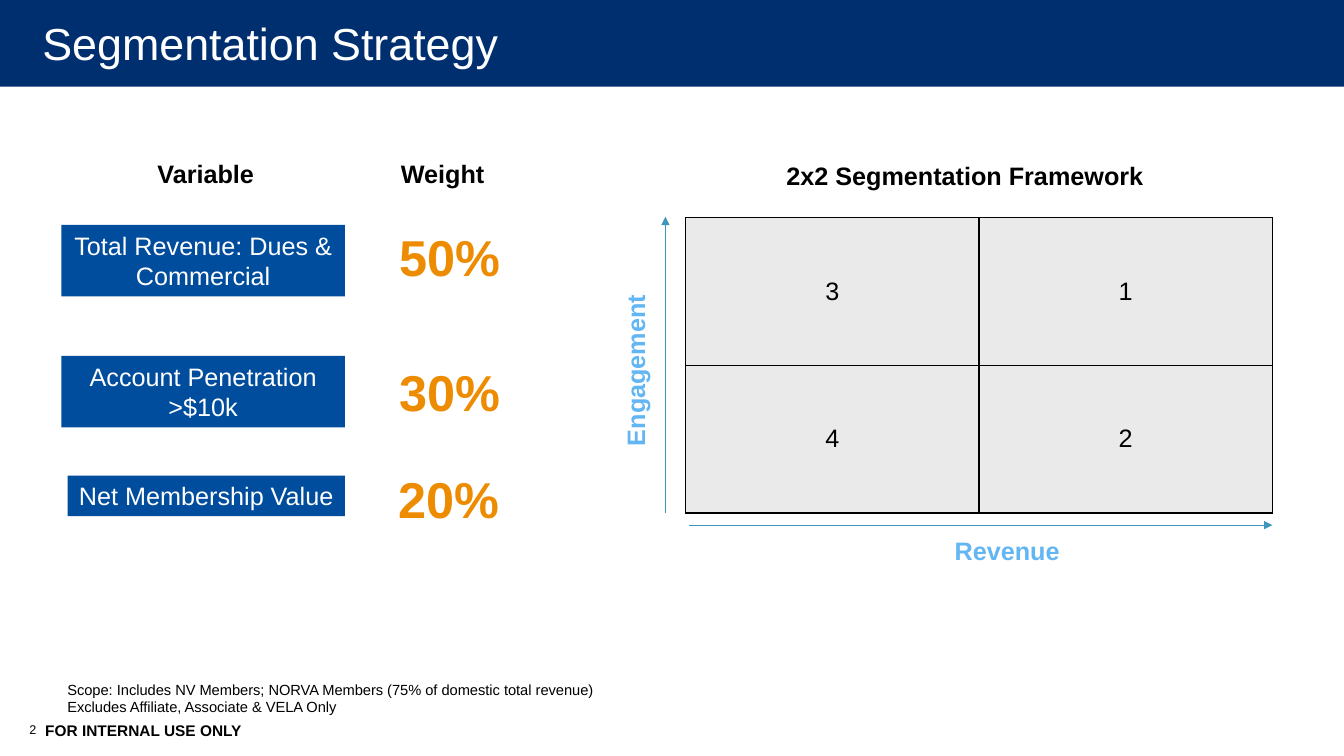
from lxml import etree
from pptx import Presentation
from pptx.dml.color import RGBColor
from pptx.enum.shapes import MSO_CONNECTOR, MSO_SHAPE
from pptx.enum.text import MSO_ANCHOR, PP_ALIGN
from pptx.oxml import parse_xml
from pptx.oxml.ns import nsdecls, qn
from pptx.util import Inches, Pt

LEFT, CENTER, RIGHT = PP_ALIGN.LEFT, PP_ALIGN.CENTER, PP_ALIGN.RIGHT
TOP, MIDDLE = MSO_ANCHOR.TOP, MSO_ANCHOR.MIDDLE
RECTANGLE = MSO_SHAPE.RECTANGLE
STRAIGHT = MSO_CONNECTOR.STRAIGHT

COLORS = {
    "banner": "002F70",
    "variable": "004C9D",
    "weight": "ED8C00",
    "axis": "62B6F3",
    "arrow": "3E96BD",
    "cell": "EBEAEA",
    "black": "000000",
    "white": "FFFFFF",
}


class SlideBuilder:
    """Holds the style and the current slide, and adds each kind of element."""

    font_name = "Arial"
    body_size = 18

    def __init__(self, slide):
        self.slide = slide

    def color(self, name):
        return RGBColor.from_string(COLORS[name])

    def fill_text(self, frame, text, size, color, bold=False, align=LEFT):
        frame.text = text
        for paragraph in frame.paragraphs:
            paragraph.alignment = align
            font = paragraph.font
            font.name, font.size, font.bold = self.font_name, Pt(size), bold
            font.color.rgb = self.color(color)

    def text(self, left, top, width, height, text, size=body_size, color="black",
             bold=False, align=LEFT, anchor=TOP, rotation=0):
        box = self.slide.shapes.add_textbox(
            Inches(left), Inches(top), Inches(width), Inches(height))
        box.rotation = rotation
        box.text_frame.word_wrap = True
        box.text_frame.vertical_anchor = anchor
        self.fill_text(box.text_frame, text, size, color, bold, align)
        return box

    def block(self, left, top, width, height, fill, text=""):
        shape = self.slide.shapes.add_shape(
            RECTANGLE, Inches(left), Inches(top), Inches(width), Inches(height))
        shape.shadow.inherit = False
        shape.fill.solid()
        shape.fill.fore_color.rgb = self.color(fill)
        shape.line.fill.background()
        if text:
            shape.text_frame.word_wrap = True
            self.fill_text(shape.text_frame, text, self.body_size, "white", align=CENTER)

    def arrow(self, start, end):
        connector = self.slide.shapes.add_connector(
            STRAIGHT, *(Inches(value) for value in start + end))
        connector.line.color.rgb = self.color("arrow")
        connector.line.width = Pt(0.75)
        line = connector.line._get_or_add_ln()
        etree.SubElement(line, qn("a:tailEnd"), type="triangle")
        etree.SubElement(connector._element.spPr, qn("a:effectLst"))

    def border(self, cell):
        properties = cell._tc.get_or_add_tcPr()
        for side in "LRTB":
            properties.append(parse_xml(
                f'<a:ln{side} {nsdecls("a")} w="{Pt(1)}"><a:solidFill>'
                f'<a:srgbClr val="{COLORS["black"]}"/></a:solidFill></a:ln{side}>'))

    def grid(self, left, top, width, height, rows):
        table = self.slide.shapes.add_table(
            len(rows), len(rows[0]), Inches(left), Inches(top),
            Inches(width), Inches(height)).table
        for row_index, row in enumerate(rows):
            for column_index, text in enumerate(row):
                cell = table.cell(row_index, column_index)
                self.border(cell)
                cell.fill.solid()
                cell.fill.fore_color.rgb = self.color("cell")
                cell.vertical_anchor = MIDDLE
                self.fill_text(cell.text_frame, text, self.body_size, "black", align=CENTER)


def main():
    presentation = Presentation()
    presentation.slide_width, presentation.slide_height = Inches(13.33), Inches(7.5)
    builder = SlideBuilder(presentation.slides.add_slide(presentation.slide_layouts[6]))

    builder.block(0, 0, 13.33, 0.86, "banner")
    title = builder.text(0.12, -0.06, 13.21, 0.97, "Segmentation Strategy",
                         size=32, color="white", anchor=MIDDLE)
    title.text_frame.margin_left = Inches(0.3)
    title.text_frame.margin_top = title.text_frame.margin_bottom = 0

    headings = [
        (1.2, 1.52, 1.68, "Variable"),
        (3.55, 1.52, 1.68, "Weight"),
        (7.59, 1.54, 3.96, "2x2 Segmentation Framework"),
    ]
    for left, top, width, text in headings:
        builder.text(left, top, width, 0.4, text, bold=True, align=CENTER)

    variables = [
        (0.61, 2.23, 0.71, "Total Revenue: Dues & Commercial", 3.86, 2.19, "50%"),
        (0.61, 3.53, 0.71, "Account Penetration >$10k", 3.86, 3.53, "30%"),
        (0.67, 4.72, 0.4, "Net Membership Value", 3.85, 4.59, "20%"),
    ]
    for left, top, height, name, weight_left, weight_top, weight in variables:
        builder.block(left, top, 3.42 - left, height, "variable", name)
        builder.text(weight_left, weight_top, 1.35, 0.71, weight,
                     size=36, color="weight", bold=True)

    builder.grid(6.8, 2.16, 5.82, 2.93, [["3", "1"], ["4", "2"]])
    builder.arrow((6.83, 5.21), (12.62, 5.21))
    builder.arrow((6.6, 5.09), (6.6, 2.15))
    builder.text(5.56, 3.32, 1.79, 0.71, "Engagement", color="axis",
                 bold=True, align=CENTER, rotation=270)
    builder.text(9.37, 5.26, 1.32, 0.4, "Revenue", color="axis", bold=True)

    builder.text(0.57, 6.7, 5.6, 0.45,
                 "Scope: Includes NV Members; NORVA Members (75% of domestic total revenue)\n"
                 "Excludes Affiliate, Associate & VELA Only", size=10.5)
    builder.text(0.35, 7.1, 2.3, 0.29, "FOR INTERNAL USE ONLY", size=11, bold=True)
    builder.text(0, 7.11, 0.46, 0.39, "2", size=9, align=RIGHT)

    presentation.save("out.pptx")


if __name__ == "__main__":
    main()
